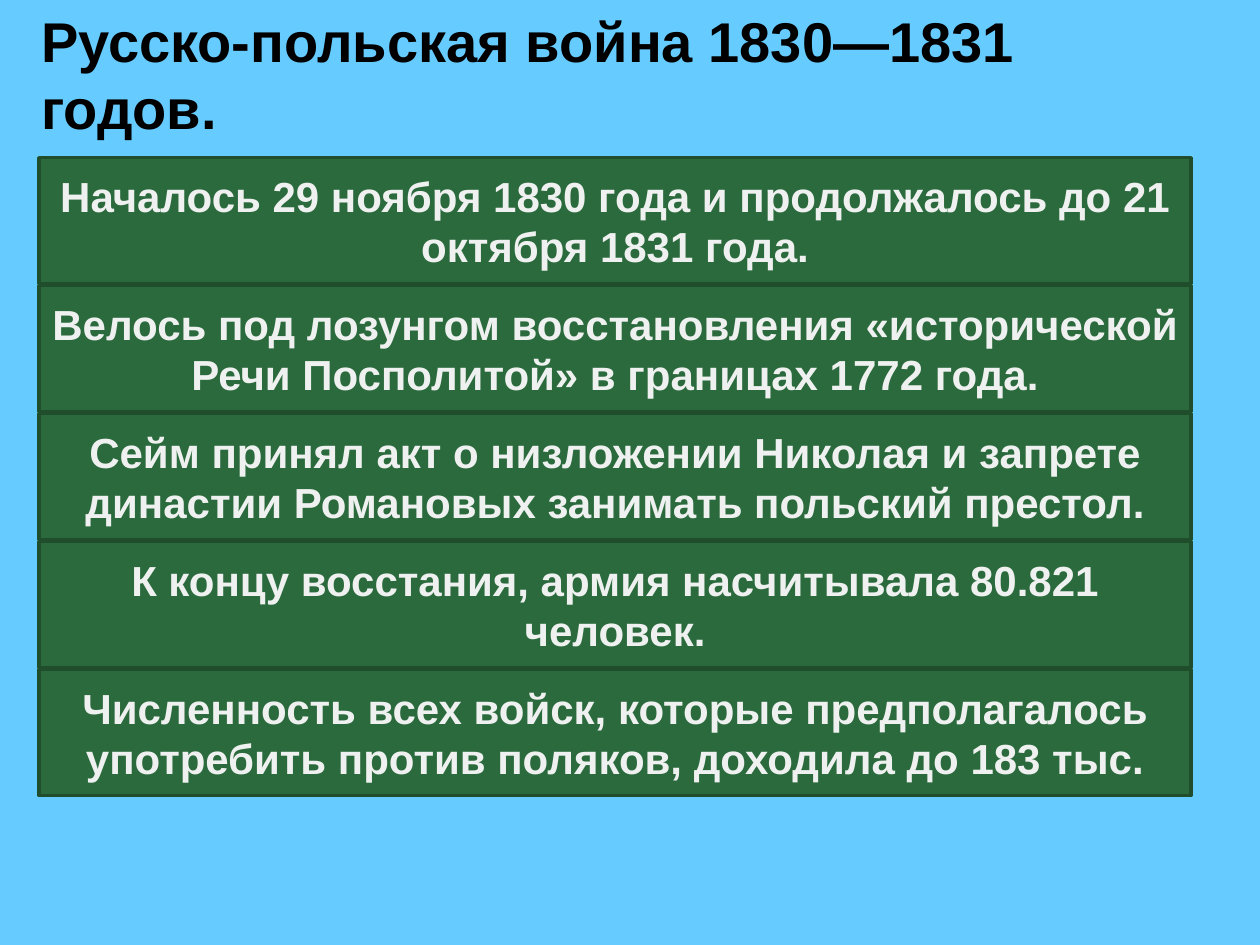
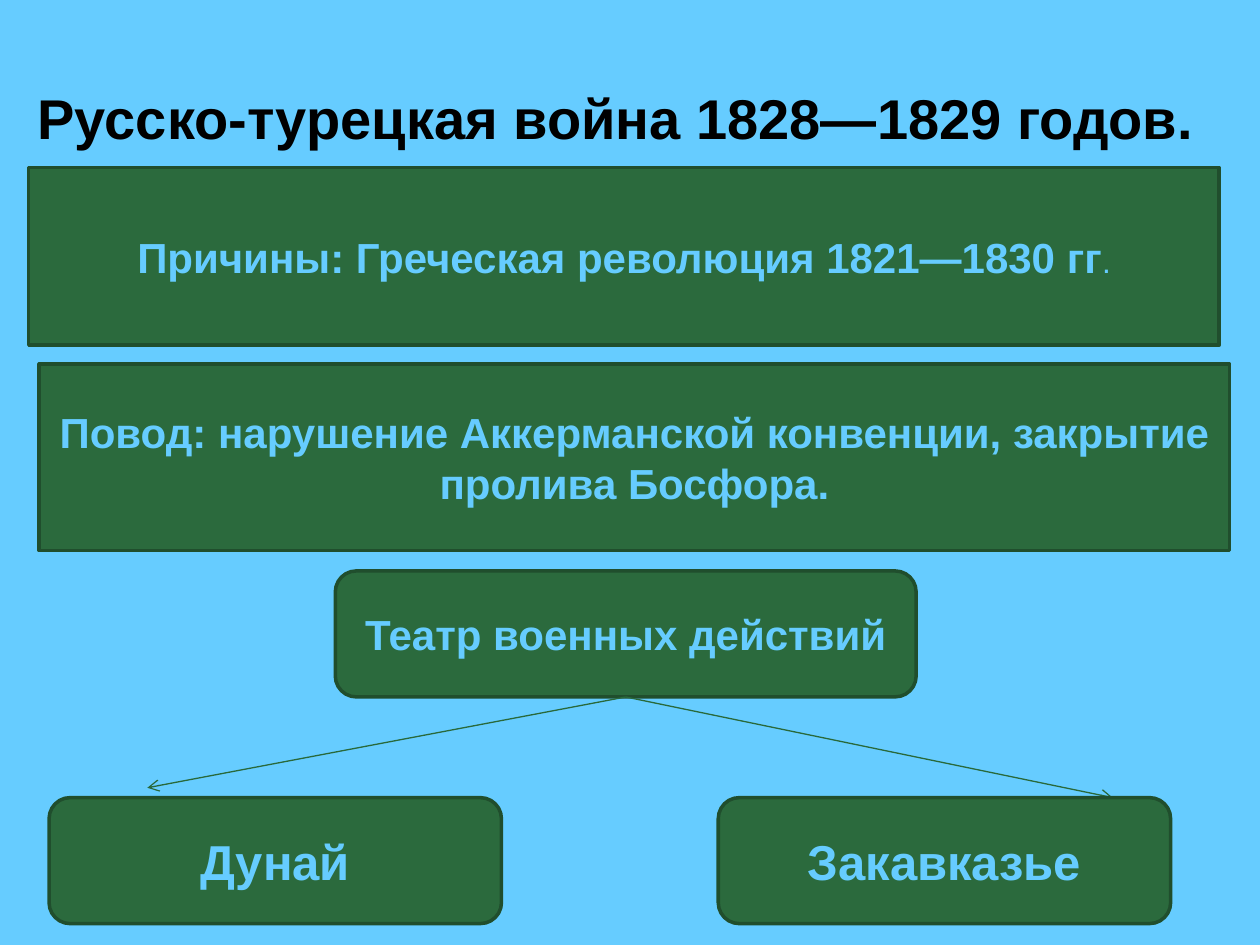
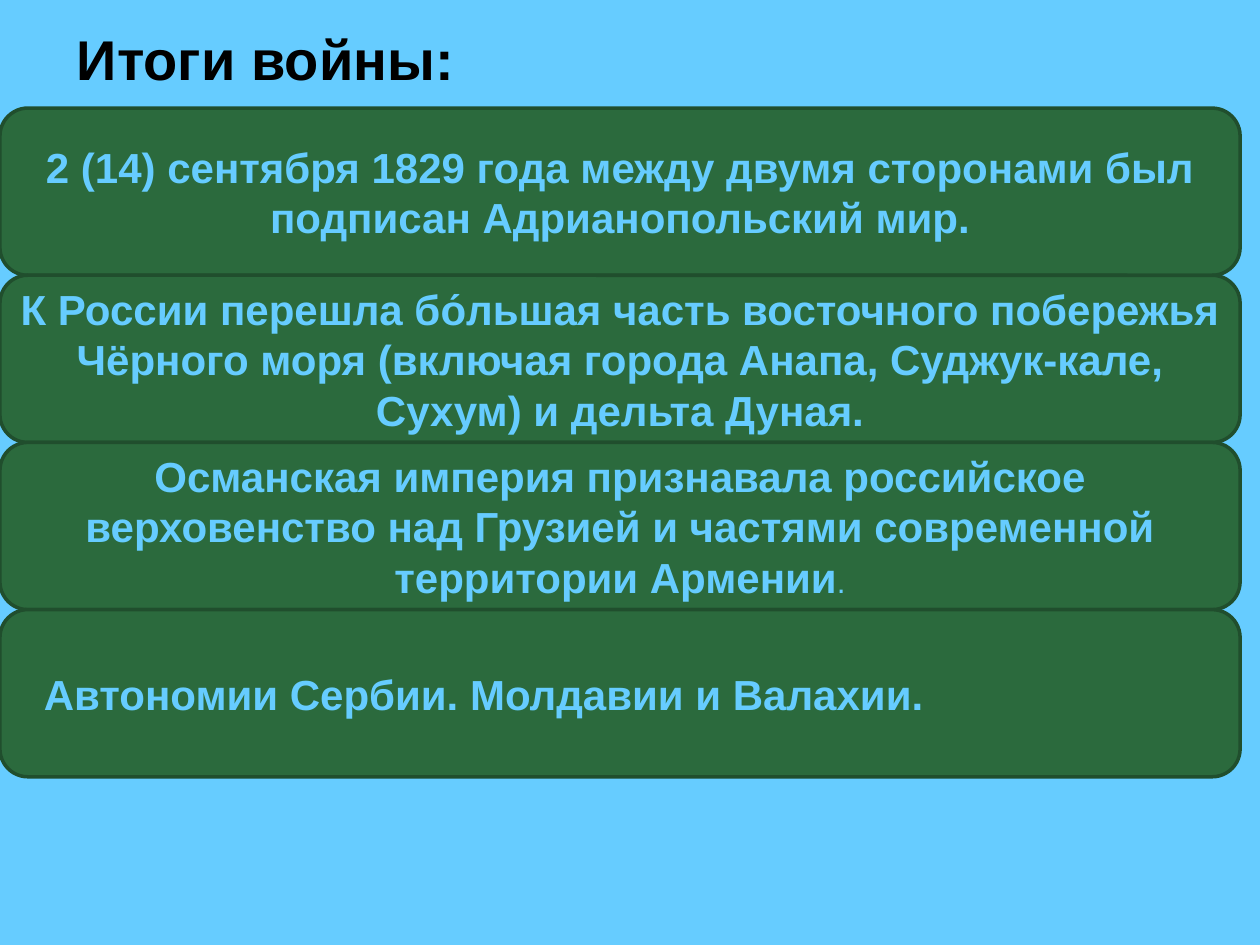
from dataclasses import dataclass

from lxml import etree
from pptx import Presentation
from pptx import util as u
from pptx.dml.color import RGBColor
from pptx.enum import shapes, text
from pptx.oxml import ns

COLOURS = {
    "background": "66CCFF",
    "panel": "2B6A3D",
    "border": "204E2D",
    "arrow": "29693B",
    "title": "000000",
    "light": "EEF1EF",
    "sky": "66CCFF",
}
FONT = "Arial"
RECTANGLE = shapes.MSO_SHAPE.RECTANGLE
ROUNDED = shapes.MSO_SHAPE.ROUNDED_RECTANGLE
LEFT = text.PP_ALIGN.LEFT
CENTER = text.PP_ALIGN.CENTER


@dataclass(frozen=True)
class Box:
    """A place on the slide, in centimetres."""
    left: float
    top: float
    width: float
    height: float

    def lengths(self) -> list[u.Length]:
        return [u.Cm(side) for side in (self.left, self.top, self.width, self.height)]


@dataclass(frozen=True)
class Panel:
    """A green panel; the ending follows its wording in small regular type."""
    wording: str
    ending: str = ""
    kind: shapes.MSO_SHAPE = RECTANGLE
    colour: str = "sky"
    size: int = 24
    align: text.PP_ALIGN = CENTER
    inset: float = 0.25


WAR_FACTS = (
    "Началось 29 ноября 1830 года и продолжалось до 21 октября 1831 года.",
    "Велось под лозунгом восстановления «исторической Речи Посполитой» в границах 1772 года.",
    "Сейм принял акт о низложении Николая и запрете династии Романовых занимать польский престол.",
    "К концу восстания, армия насчитывала 80.821 человек.",
    "Численность всех войск, которые предполагалось употребить против поляков, доходила до 183 тыс.",
)
RESULTS = (
    Panel("2 (14) сентября 1829 года между двумя сторонами был подписан Адрианопольский мир.",
          kind=ROUNDED),
    Panel("К России перешла бо́льшая часть восточного побережья Чёрного моря "
          "(включая города Анапа, Суджук-кале, Сухум) и дельта Дуная.", kind=ROUNDED),
    Panel("Османская империя признавала российское верховенство над Грузией и частями "
          "современной территории Армении", ending=".", kind=ROUNDED),
    Panel("Автономии Сербии. Молдавии и Валахии.", kind=ROUNDED, align=LEFT, inset=0.72),
)


def rgb(name: str) -> RGBColor:
    return RGBColor.from_string(COLOURS[name])


def style_font(font, size: int, colour: str, bold: bool = True) -> None:
    font.name = FONT
    font.size = u.Pt(size)
    font.bold = bold
    font.color.rgb = rgb(colour)


def add_titled_slide(presentation, title: str, box: Box, inset: float = 0.25):
    slide = presentation.slides.add_slide(presentation.slide_layouts[6])
    slide.background.fill.solid()
    slide.background.fill.fore_color.rgb = rgb("background")
    frame = slide.shapes.add_textbox(*box.lengths()).text_frame
    frame.word_wrap = True
    frame.vertical_anchor = text.MSO_ANCHOR.BOTTOM
    frame.margin_left = u.Cm(inset)
    paragraph = frame.paragraphs[0]
    paragraph.text = title
    style_font(paragraph.font, 32, "title")
    return slide


def add_panel(slide, panel: Panel, box: Box):
    shape = slide.shapes.add_shape(panel.kind, *box.lengths())
    shape.shadow.inherit = False
    shape.fill.solid()
    shape.fill.fore_color.rgb = rgb("panel")
    shape.line.color.rgb = rgb("border")
    shape.line.width = u.Pt(2)
    frame = shape.text_frame
    frame.word_wrap = True
    frame.vertical_anchor = text.MSO_ANCHOR.MIDDLE
    frame.margin_left = u.Cm(panel.inset)
    paragraph = frame.paragraphs[0]
    paragraph.alignment = panel.align
    wording = paragraph.add_run()
    wording.text = panel.wording
    if panel.ending:
        style_font(wording.font, panel.size, panel.colour)
        ending = paragraph.add_run()
        ending.text = panel.ending
        style_font(ending.font, 18, panel.colour, bold=False)
    else:
        style_font(paragraph.font, panel.size, panel.colour)
    return shape


def add_panel_stack(slide, panels, first: Box, pitch: float) -> None:
    for row, panel in enumerate(panels):
        add_panel(slide, panel,
                  Box(first.left, first.top + row * pitch, first.width, first.height))


def add_arrow_from_bottom(slide, source, end_x: float, end_y: float) -> None:
    arrow = slide.shapes.add_connector(shapes.MSO_CONNECTOR.STRAIGHT,
                                       0, 0, u.Cm(end_x), u.Cm(end_y))
    arrow.begin_connect(source, 2)
    arrow.line.color.rgb = rgb("arrow")
    arrow.line.width = u.Pt(0.75)
    etree.SubElement(arrow.line._get_or_add_ln(), ns.qn("a:tailEnd"), type="arrow")
    etree.SubElement(arrow._element.spPr, ns.qn("a:effectLst"))


def build_polish_war(presentation) -> None:
    slide = add_titled_slide(presentation, "Русско-польская война 1830—1831 годов.",
                             Box(0.58, 0, 23.62, 2.97))
    panels = [Panel(fact, colour="light") for fact in WAR_FACTS]
    add_panel_stack(slide, panels, Box(0.79, 3.18, 23.22, 2.54), pitch=2.58)


def build_turkish_war(presentation) -> None:
    slide = add_titled_slide(presentation, "Русско-турецкая война 1828—1829 годов.",
                             Box(0.51, 0.58, 24.56, 2.59))
    add_panel(slide, Panel("Причины: Греческая революция 1821—1830 гг", ending="."),
              Box(0.58, 3.38, 24, 3.58))
    add_panel(slide, Panel("Повод: нарушение Аккерманской конвенции, закрытие пролива Босфора."),
              Box(0.79, 7.34, 24, 3.76))
    theatre = add_panel(slide, Panel("Театр военных действий", kind=ROUNDED),
                        Box(6.76, 11.51, 11.71, 2.54))
    add_arrow_from_bottom(slide, theatre, 22.43, 16.08)
    add_arrow_from_bottom(slide, theatre, 2.97, 15.88)
    for region, left in (("Дунай", 0.99), ("Закавказье", 14.48)):
        add_panel(slide, Panel(region, kind=ROUNDED, size=28), Box(left, 16.08, 9.12, 2.54))


def build_results(presentation) -> None:
    slide = add_titled_slide(presentation, "Итоги войны:",
                             Box(0.99, 0.58, 24.05, 1.4), inset=0.56)
    add_panel_stack(slide, RESULTS, Box(0, 2.18, 25, 3.37), pitch=3.37)


def main() -> None:
    presentation = Presentation()
    presentation.slide_width = u.Cm(25.4)
    presentation.slide_height = u.Cm(19.05)
    build_polish_war(presentation)
    build_turkish_war(presentation)
    build_results(presentation)
    presentation.save("out.pptx")


if __name__ == "__main__":
    main()
